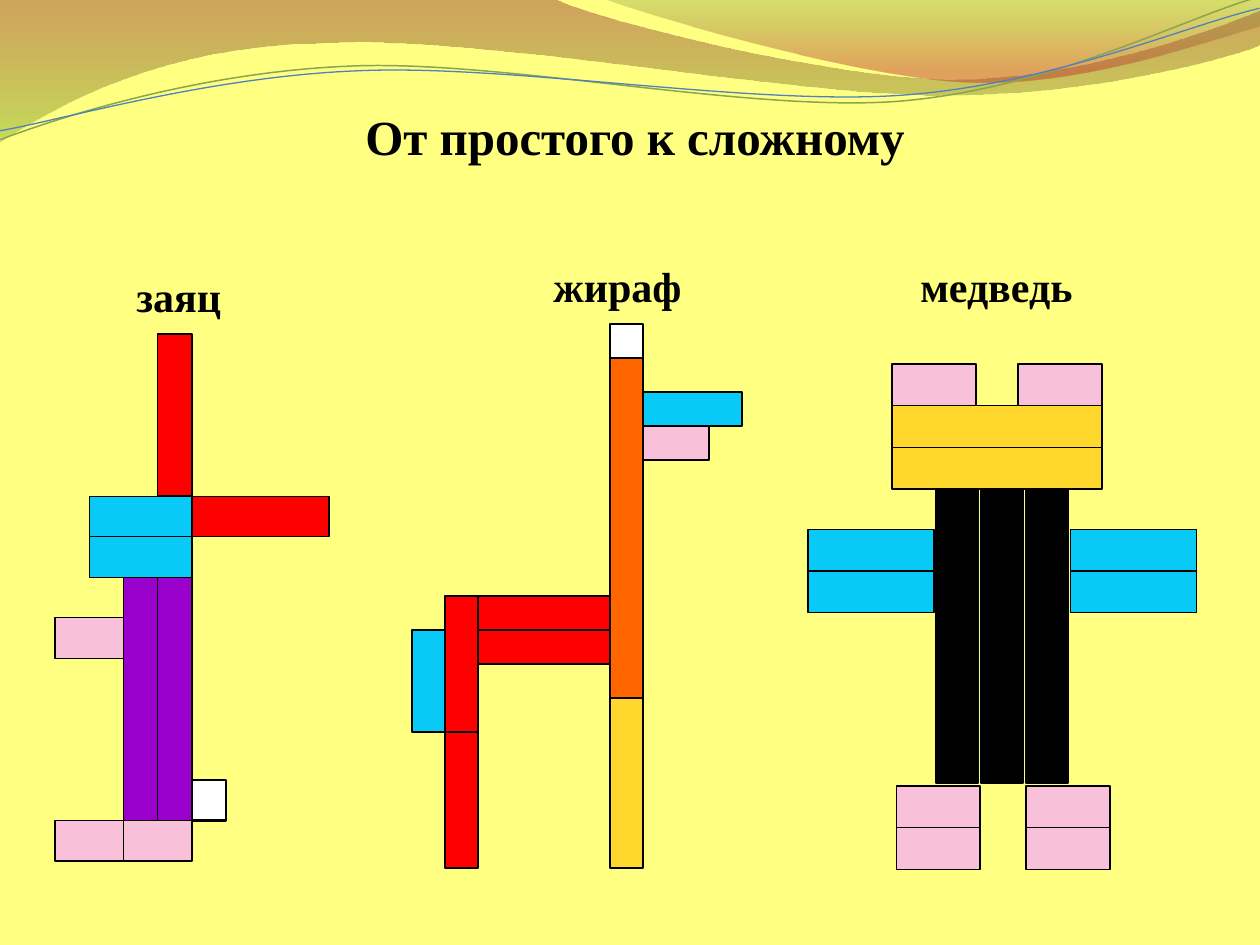
from dataclasses import dataclass

from lxml import etree
from pptx import Presentation
from pptx.dml.color import RGBColor
from pptx.enum.shapes import MSO_SHAPE
from pptx.enum.text import MSO_ANCHOR, MSO_AUTO_SIZE, PP_ALIGN
from pptx.oxml.ns import qn
from pptx.util import Pt

RECTANGLE = MSO_SHAPE.RECTANGLE
EMU_PER_PX = 914400 / 126
SLIDE_SIZE = (1260, 945)
TITLE_ONLY_LAYOUT = 5
WAVE_ROTATION = 357.3


@dataclass(frozen=True)
class Theme:
    font: str = "Times New Roman"
    title_size: int = 28
    label_size: int = 24
    background: str = "FFFF82"
    ink: str = "000000"
    thin: float = 0.75
    thick: float = 1.5


THEME = Theme()
BRICK_COLOURS = {
    "red": "FF0000", "blue": "09CAF7", "violet": "9900CC", "pink": "F8C0D9",
    "white": "FFFFFF", "orange": "FF6600", "yellow": "FFD72D", "black": "000000",
}

TITLE = ("От простого к сложному", (63, 97, 1144, 68))

# Each brick: colour, column, row, columns wide, rows high on the figure's grid.
FIGURES = [
    {
        "label": ("заяц", (124, 264, 111, 63)),
        "box": (55, 334, 274, 527), "grid": (8, 13),
        "bricks": [
            ("red", 4, 4, 4, 1), ("red", 3, 0, 1, 4),
            ("blue", 1, 4, 3, 1), ("blue", 1, 5, 3, 1),
            ("violet", 2, 6, 1, 6), ("violet", 3, 6, 1, 6),
            ("pink", 0, 12, 2, 1), ("pink", 2, 12, 2, 1), ("pink", 0, 7, 2, 1),
            ("white", 4, 11, 1, 1),
        ],
    },
    {
        "label": ("жираф", (541, 254, 155, 63)),
        "box": (412, 324, 330, 544), "grid": (10, 16),
        "bricks": [
            ("red", 1, 8, 1, 4), ("red", 2, 8, 4, 1),
            ("red", 2, 9, 4, 1), ("red", 1, 12, 1, 4),
            ("orange", 6, 1, 1, 10), ("white", 6, 0, 1, 1), ("yellow", 6, 11, 1, 5),
            ("blue", 7, 2, 3, 1), ("blue", 0, 9, 1, 3), ("pink", 7, 3, 2, 1),
        ],
    },
    {
        "label": ("медведь", (908, 254, 179, 63)),
        "box": (808, 364, 420, 500), "grid": (10, 12),
        "bricks": [
            *[("black", column, 3, 1, 7.06) for column in (3.05, 4.12, 5.19)],
            *[("yellow", 2, row, 5, 1) for row in (1, 2)],
            *[("blue", column, row, 3, 1) for column in (0, 6.26) for row in (3.97, 4.97)],
            *[("pink", column, row, 2, 1) for column in (2.1, 5.19) for row in (10.13, 11.13)],
            *[("pink", column, 0, 2, 1) for column in (2, 5)],
        ],
    },
]

# Outline parts: two numbers end a straight line, six numbers are a Bezier curve.
# Gradient stops: position, colour, opacity in percent.
BANDS = [
    {
        "outline": [(0, 0), (554, -1), (600, 21, 837, 79, 955, 79),
                    (1075, 79, 1207, 33, 1260, 11), (1261, 45),
                    (1239, 55, 1096, 96, 940, 95), (784, 95, 481, 35, 324, 43),
                    (163, 45, 58, 105, -1, 142), (0, 0)],
        "stops": [(0, "973330", 45), (1, "95C238", 55)],
    },
    {
        "outline": [(604, -1), (641, 14, 859, 78, 969, 82),
                    (1079, 87, 1211, 40, 1260, 26), (1260, 0), (604, -1)],
        "stops": [(0, "769537", 30), (0.8, "BE3330", 45)],
    },
]
WAVES = [
    ("89A54F", 0.85, [(-2, 110), (59, 90, 200, 52, 350, 53),
                      (499, 53, 745, 118, 896, 114), (1049, 109, 1184, 45, 1260, 27)]),
    ("4F81BD", 0.75, [(-2, 101), (57, 94, 207, 57, 357, 58),
                      (509, 58, 750, 112, 902, 108), (1052, 104, 1187, 52, 1262, 38)]),
]


def px(*lengths):
    return [round(length * EMU_PER_PX) for length in lengths]


def colour(value):
    return RGBColor.from_string(value)


def add_outline(slide, outline, close):
    """Draw the outline, joining each six-number part's points into one curve."""
    start, *points = [px(*part[index:index + 2])
                      for part in outline for index in range(0, len(part), 2)]
    builder = slide.shapes.build_freeform(*start, scale=1.0)
    builder.add_line_segments(points, close=close)
    shape = builder.convert_to_shape()
    shape.shadow.inherit = False
    lines = iter(list(shape._element.iter(qn("a:lnTo"))))
    for part in outline[1:]:
        segment = next(lines)
        if len(part) == 6:
            segment.addprevious(curve := etree.Element(qn("a:cubicBezTo")))
            for line in (segment, next(lines), next(lines)):
                curve.append(line[0])
                line.getparent().remove(line)
    return shape


def add_band(slide, outline, stops):
    shape = add_outline(slide, outline, close=True)
    shape.line.fill.background()
    shape.fill.gradient()
    shape.fill.gradient_angle = 270
    for stop, (position, value, _) in zip(shape.fill.gradient_stops, stops):
        stop.position = position
        stop.color.rgb = colour(value)
    for element, (_, _, opacity) in zip(shape._element.iter(qn("a:srgbClr")), stops):
        etree.SubElement(element, qn("a:alpha"), val=str(opacity * 1000))


def add_wave(slide, value, width, outline):
    shape = add_outline(slide, outline, close=False)
    shape.rotation = WAVE_ROTATION
    shape.fill.background()
    shape.line.color.rgb = colour(value)
    shape.line.width = Pt(width)


def add_figure(slide, box, grid, bricks):
    left, top, width, height = box
    cell_width, cell_height = width / grid[0], height / grid[1]
    group = slide.shapes.add_group_shape()
    for name, column, row, columns, rows in bricks:
        brick = group.shapes.add_shape(RECTANGLE, *px(
            left + column * cell_width, top + row * cell_height,
            columns * cell_width, rows * cell_height))
        brick.shadow.inherit = False
        brick.fill.solid()
        brick.fill.fore_color.rgb = colour(BRICK_COLOURS[name])
        brick.line.color.rgb = colour(THEME.ink)
        brick.line.width = Pt(THEME.thick if name == "white" else THEME.thin)


def write_text(shape, text, size):
    shape.text_frame.text = text
    paragraph = shape.text_frame.paragraphs[0]
    paragraph.font.name = THEME.font
    paragraph.font.size = Pt(size)
    paragraph.font.bold = True
    paragraph.font.color.rgb = colour(THEME.ink)
    return paragraph


def add_title(slide, text, box):
    title = slide.shapes.title
    title.left, title.top, title.width, title.height = px(*box)
    write_text(title, text, THEME.title_size).alignment = PP_ALIGN.CENTER
    frame = title.text_frame
    frame.vertical_anchor = MSO_ANCHOR.BOTTOM
    frame.margin_left = frame.margin_right = frame.margin_bottom = 0


def add_label(slide, text, box):
    label = slide.shapes.add_textbox(*px(*box))
    write_text(label, text, THEME.label_size)
    label.text_frame.word_wrap = False
    label.text_frame.auto_size = MSO_AUTO_SIZE.SHAPE_TO_FIT_TEXT


def main():
    presentation = Presentation()
    presentation.slide_width, presentation.slide_height = px(*SLIDE_SIZE)
    slide = presentation.slides.add_slide(presentation.slide_layouts[TITLE_ONLY_LAYOUT])
    slide.background.fill.solid()
    slide.background.fill.fore_color.rgb = colour(THEME.background)
    for band in BANDS:
        add_band(slide, **band)
    for wave in WAVES:
        add_wave(slide, *wave)
    for figure in FIGURES:
        add_figure(slide, figure["box"], figure["grid"], figure["bricks"])
        add_label(slide, *figure["label"])
    add_title(slide, *TITLE)
    presentation.save("out.pptx")


if __name__ == "__main__":
    main()
